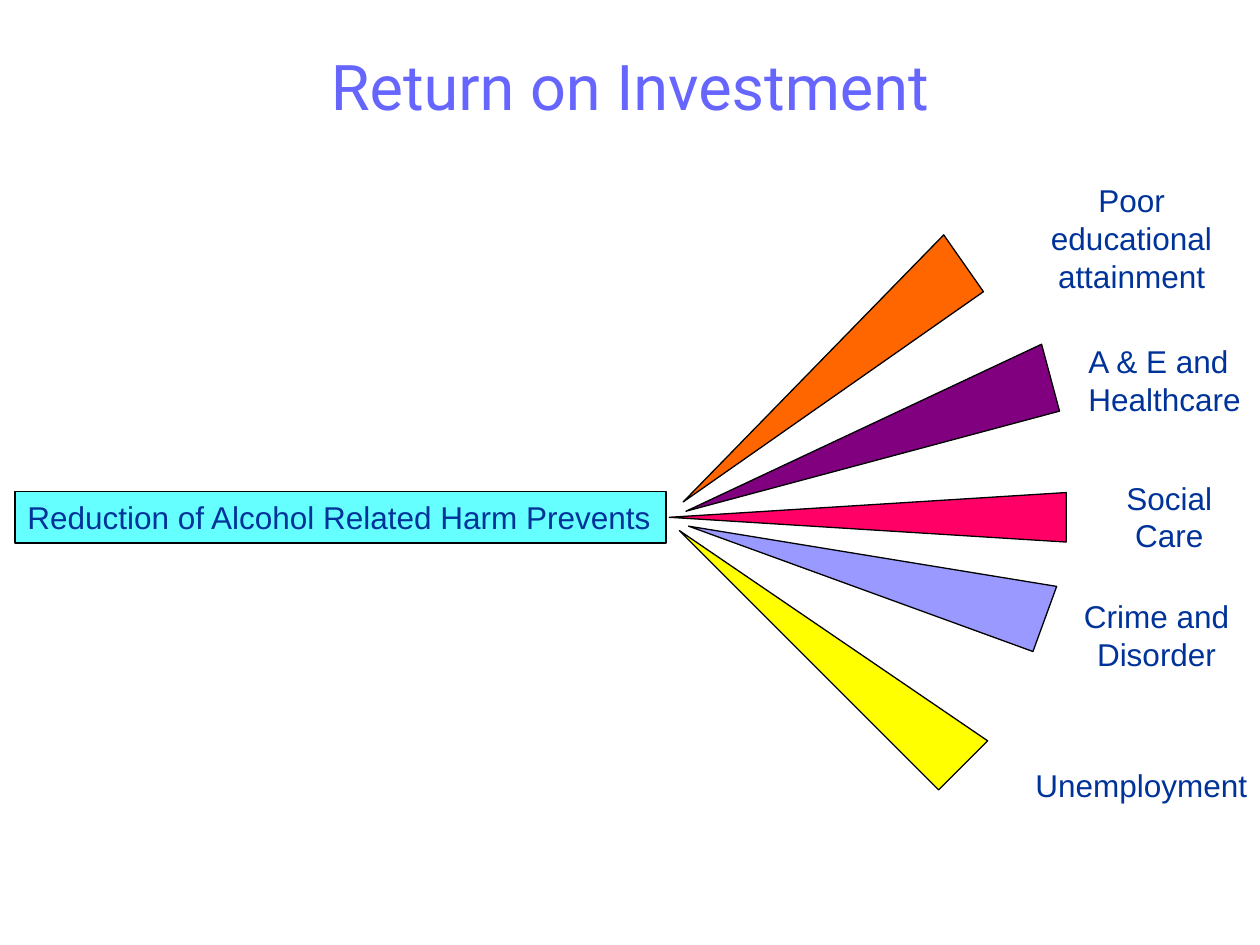
import pptx
import pptx.util
import pptx.dml.color
import pptx.enum.shapes
import pptx.enum.text

Pt = pptx.util.Pt
Kind = pptx.enum.shapes.MSO_SHAPE
Align = pptx.enum.text.PP_ALIGN
Anchor = pptx.enum.text.MSO_ANCHOR
Fit = pptx.enum.text.MSO_AUTO_SIZE

HUES = {
    "title": "6666FF", "text": "003399", "line": "000000", "box": "66FFFF",
    "pink": "FF0066", "yellow": "FFFF00", "lilac": "9999FF",
    "orange": "FF6600", "purple": "800080",
}


def style(shape, fill, width):
    shape.shadow.inherit = False
    shape.fill.solid()
    shape.fill.fore_color.rgb = pptx.dml.color.RGBColor.from_string(HUES[fill])
    shape.line.color.rgb = pptx.dml.color.RGBColor.from_string(HUES["line"])
    shape.line.width = Pt(width)


def write(shape, text, size, font, hue, align, anchor, wrap):
    frame = shape.text_frame
    frame.text = text
    frame.word_wrap = wrap
    frame.vertical_anchor = anchor
    for para in frame.paragraphs:
        para.alignment = align
        para.font.size = Pt(size)
        para.font.name = font
        para.font.color.rgb = pptx.dml.color.RGBColor.from_string(HUES[hue])


deck = pptx.Presentation()
deck.slide_width, deck.slide_height = Pt(720), Pt(540)
slide = deck.slides.add_slide(deck.slide_layouts[5])
shapes = slide.shapes

# Title
title = shapes.title
title.left, title.top, title.width, title.height = Pt(36), Pt(3.6), Pt(648), Pt(90)
write(title, "Return on Investment", 36, "Roboto", "title",
      Align.CENTER, Anchor.MIDDLE, True)

# Fan of wedges: kind, left, top, width, height, turn, fill
wedges = [
    (Kind.ISOSCELES_TRIANGLE, 481.7, 182.2, 28.3, 226.8, 270, "pink"),
    (Kind.RIGHT_TRIANGLE, 456.5, 258.5, 39.6, 209.5, 315, "yellow"),
    (Kind.RIGHT_TRIANGLE, 478.8, 213.1, 39.6, 209.5, 290, "lilac"),
    (Kind.RIGHT_TRIANGLE, 445, 105.8, 39.6, 209.5, 235, "orange"),
    (Kind.RIGHT_TRIANGLE, 473.8, 133.9, 39.6, 221, 255, "purple"),
]
for kind, left, top, width, height, turn, fill in wedges:
    wedge = shapes.add_shape(kind, Pt(left), Pt(top), Pt(width), Pt(height))
    wedge.rotation = turn
    style(wedge, fill, 0.75)

# Outcome labels: text, left, top, width, height, align, wrap
labels = [
    ("Crime and \nDisorder", 609.8, 337.7, 102.2, 50.4, Align.CENTER, False),
    ("Unemployment", 584.6, 434.2, 135.4, 28.8, Align.LEFT, False),
    ("A & E and\nHealthcare", 614.9, 192.2, 101.5, 50.4, Align.LEFT, False),
    ("Social\nCare", 636.5, 270, 63.4, 50.4, Align.CENTER, False),
    ("Poor educational\vattainment", 592.6, 100.1, 108, 72, Align.CENTER, True),
]
for text, left, top, width, height, align, wrap in labels:
    label = shapes.add_textbox(Pt(left), Pt(top), Pt(width), Pt(height))
    write(label, text, 18, "Arial", "text", align, Anchor.TOP, wrap)
    label.text_frame.auto_size = Fit.SHAPE_TO_FIT_TEXT

# Source box
box = shapes.add_shape(Kind.RECTANGLE, Pt(8.6), Pt(280.8), Pt(372.2), Pt(29.5))
style(box, "box", 1)
write(box, "Reduction of Alcohol Related Harm Prevents", 18, "Arial", "text",
      Align.LEFT, Anchor.TOP, False)
box.text_frame.auto_size = Fit.SHAPE_TO_FIT_TEXT

deck.save("out.pptx")
